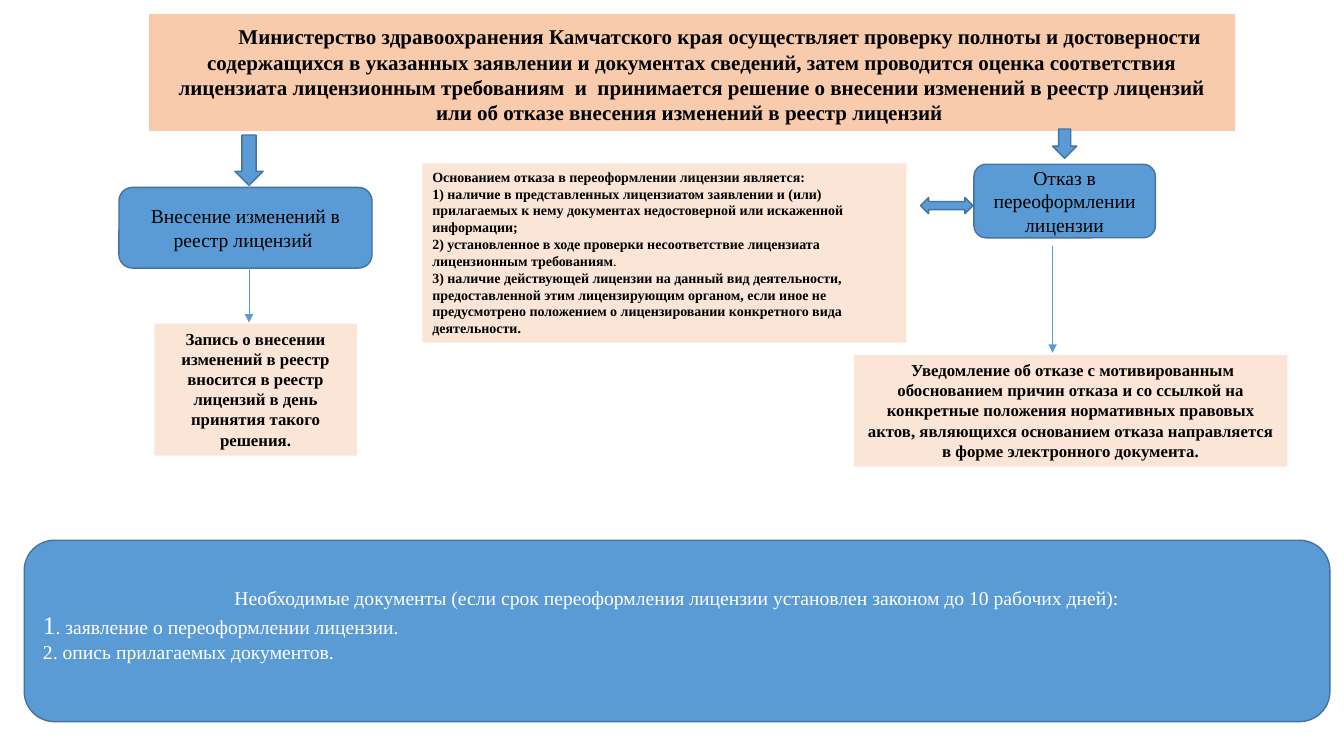
from lxml import etree
from pptx import Presentation
from pptx.dml.color import RGBColor
from pptx.enum import shapes, text
from pptx.oxml import ns
from pptx.util import Inches, Pt

FONT = "Times New Roman"
BLACK, WHITE = "000000", "FFFFFF"
BLUE, DARK_BLUE, PEACH, LIGHT_PEACH = "5B9BD5", "43739E", "F8CBAD", "FBE5D6"
CENTER, LEFT = text.PP_ALIGN.CENTER, text.PP_ALIGN.LEFT
KIND = shapes.MSO_SHAPE

REVIEW = "Министерство здравоохранения Камчатского края осуществляет проверку полноты и достоверности содержащихся в указанных заявлении и документах сведений, затем проводится оценка соответствия лицензиата лицензионным требованиям  и  принимается решение о внесении изменений в реестр лицензий или об отказе внесения изменений в реестр лицензий "
RECORD = "Запись о внесении изменений в реестр вносится в реестр лицензий в день принятия такого решения."
NOTICE = " Уведомление об отказе с мотивированным обоснованием причин отказа и со ссылкой на конкретные положения нормативных правовых актов, являющихся основанием отказа направляется в форме электронного документа."
GROUNDS = [
    "Основанием отказа в переоформлении лицензии является:",
    "1) наличие в представленных лицензиатом заявлении и (или) прилагаемых к нему документах недостоверной или искаженной информации;",
    [("2) установленное в ходе проверки несоответствие лицензиата лицензионным требованиям", {}),
     (".", {"bold": False})],
    "3) наличие действующей лицензии на данный вид деятельности, предоставленной этим лицензирующим органом, если иное не предусмотрено положением о лицензировании конкретного вида деятельности.",
]
DOCUMENTS_TITLE = "Необходимые документы (если срок переоформления лицензии установлен законом до 10 рабочих дней):"
DOCUMENTS = [
    [("1", {"size": 18}), (". заявление о переоформлении лицензии.", {})],
    "2.\u00a0опись прилагаемых документов.".replace("\u00a0", " "),
]

PANELS = [
    ((1.48, 0.14, 10.77, 1.16), PEACH, [[(" ", {"size": 18}), (REVIEW, {})]],
     {"size": 15, "bold": True, "indent": 0.49}),
    ((1.53, 3.21, 2.01, 1.31), LIGHT_PEACH, [RECORD], {"size": 12, "bold": True}),
    ((4.19, 1.62, 4.8, 1.78), LIGHT_PEACH, GROUNDS, {"size": 10, "bold": True, "align": LEFT}),
    ((8.47, 3.52, 4.3, 1.11), LIGHT_PEACH, [NOTICE], {"size": 12, "bold": True}),
]
DECISIONS = [
    ((1.18, 1.86, 2.51, 0.8), "Внесение изменений в реестр лицензий "),
    ((9.66, 1.63, 1.8, 0.73), "Отказ в переоформлении лицензии"),
]
BLOCK_ARROWS = [
    (KIND.DOWN_ARROW, (2.33, 1.34, 0.28, 0.5)),
    (KIND.DOWN_ARROW, (10.44, 1.28, 0.24, 0.29)),
    (KIND.LEFT_RIGHT_ARROW, (9.13, 1.96, 0.52, 0.16)),
]
THIN_ARROWS = [(2.47, 1.82, 3.2), (10.44, 2.44, 3.5)]
DOCUMENTS_BOX = (0.24, 5.36, 12.95, 1.8)


def color(value):
    return RGBColor.from_string(value)


def add_box(slide, kind, box, fill, outline=None):
    shape = slide.shapes.add_shape(kind, *map(Inches, box))
    shape.shadow.inherit = False
    shape.fill.solid()
    shape.fill.fore_color.rgb = color(fill)
    if outline:
        shape.line.color.rgb = color(outline)
        shape.line.width = Pt(1)
    else:
        shape.line.fill.background()
    return shape


def write(shape, paragraphs, size=14, bold=False, ink=BLACK, align=CENTER,
          anchor=text.MSO_ANCHOR.MIDDLE, indent=0):
    frame = shape.text_frame
    frame.word_wrap = True
    frame.vertical_anchor = anchor
    for content in paragraphs:
        first = not frame.paragraphs[0].runs
        paragraph = frame.paragraphs[0] if first else frame.add_paragraph()
        paragraph.alignment = align
        if indent:
            paragraph._p.get_or_add_pPr().set("indent", str(Inches(indent)))
        runs = [(content, {})] if isinstance(content, str) else content
        for words, changes in runs:
            run = paragraph.add_run()
            run.text = words
            run.font.name = FONT
            run.font.size = Pt(changes.get("size", size))
            run.font.bold = changes.get("bold", bold)
            run.font.color.rgb = color(ink)


def add_thin_arrow(slide, x, top, bottom):
    arrow = slide.shapes.add_connector(
        shapes.MSO_CONNECTOR.STRAIGHT, *map(Inches, (x, top, x, bottom)))
    arrow.line.color.rgb = color(BLUE)
    arrow.line.width = Pt(0.5)
    etree.SubElement(arrow.line._get_or_add_ln(), ns.qn("a:tailEnd"), type="triangle")
    etree.SubElement(arrow._element.spPr, ns.qn("a:effectLst"))


def main():
    presentation = Presentation()
    presentation.slide_width = Inches(13.33)
    presentation.slide_height = Inches(7.5)
    slide = presentation.slides.add_slide(presentation.slide_layouts[6])

    for box, fill, paragraphs, style in PANELS:
        panel = add_box(slide, KIND.RECTANGLE, box, fill)
        write(panel, paragraphs, anchor=text.MSO_ANCHOR.TOP, **style)
    for box, words in DECISIONS:
        write(add_box(slide, KIND.ROUNDED_RECTANGLE, box, BLUE, DARK_BLUE), [words])
    for kind, box in BLOCK_ARROWS:
        add_box(slide, kind, box, BLUE, DARK_BLUE)
    for x, top, bottom in THIN_ARROWS:
        add_thin_arrow(slide, x, top, bottom)

    documents = add_box(slide, KIND.ROUNDED_RECTANGLE, DOCUMENTS_BOX, BLUE, DARK_BLUE)
    write(documents, [DOCUMENTS_TITLE, *DOCUMENTS], ink=WHITE, align=LEFT)
    documents.text_frame.paragraphs[0].alignment = CENTER
    documents.text_frame.margin_bottom = Inches(0.18)

    presentation.save("out.pptx")


if __name__ == "__main__":
    main()
